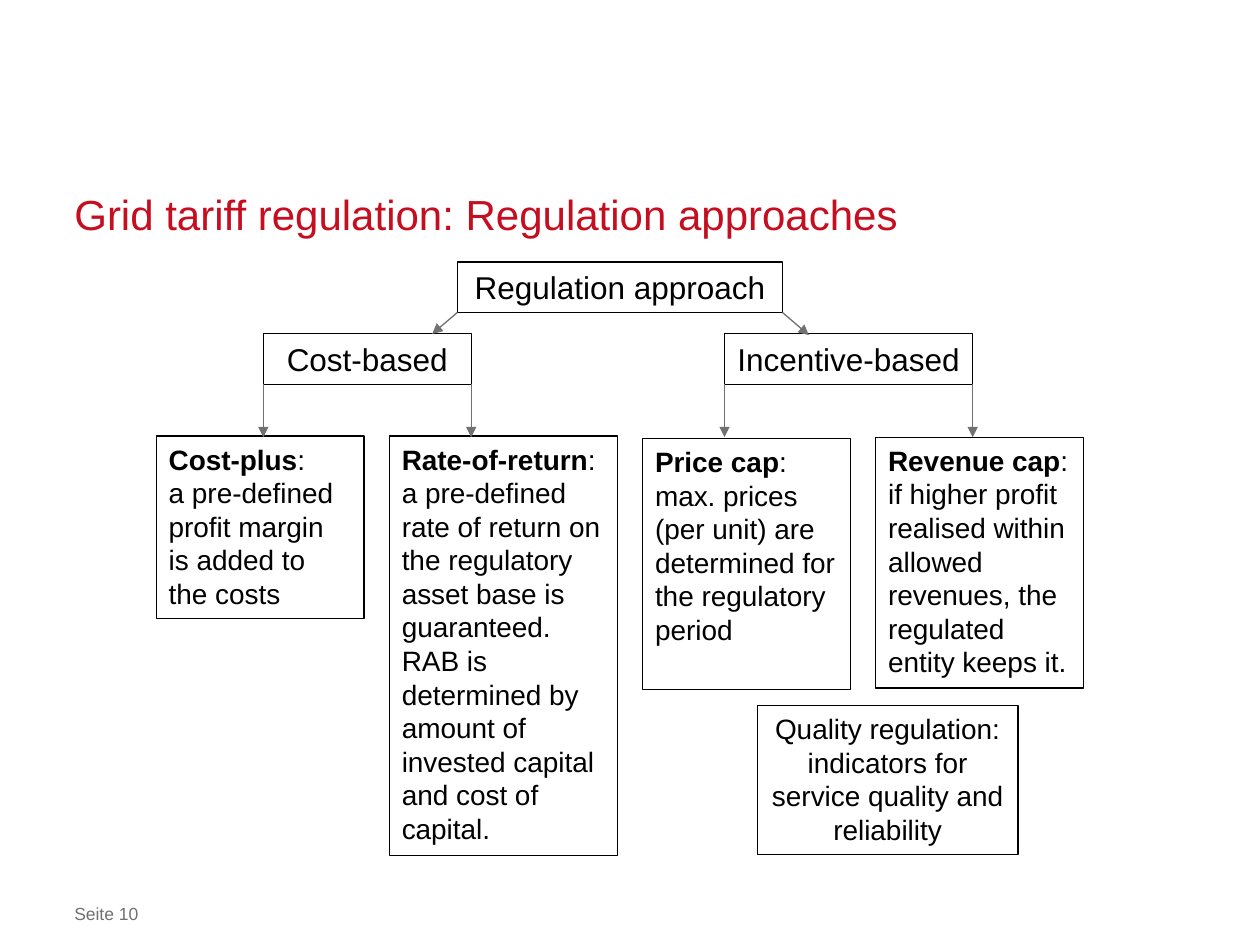
from pptx import Presentation
from pptx import util as u
from pptx.dml.color import RGBColor
from pptx.enum import shapes, text
from pptx.oxml.ns import qn
from lxml import etree

FONT = "Arial"
BLACK, RED, GREY = "000000", "C50E1F", "717171"
LEFT, CENTER = text.PP_ALIGN.LEFT, text.PP_ALIGN.CENTER

# Tree nodes: label, left, top, width, height
ROOT = ("Regulation approach", 3.63, 2.08, 2.58, 0.4)
BRANCHES = [
    ("Cost-based", 2.09, 2.65, 1.65, 0.4),
    ("Incentive-based", 5.75, 2.65, 1.97, 0.4),
]
# Methods: name, explanations, left, top, width, height
METHODS = [
    ("Cost-plus", ["a pre-defined profit margin is added to the costs"],
     1.24, 3.46, 1.65, 1.45),
    ("Rate-of-return",
     ["a pre-defined rate of return on the regulatory asset base is guaranteed.",
      "RAB is determined by amount of invested capital and cost of capital."],
     3.09, 3.46, 1.81, 3.33),
    ("Price cap",
     ["max. prices (per unit) are determined for the regulatory period"],
     5.1, 3.48, 1.65, 1.99),
    ("Revenue cap",
     ["if higher profit realised within allowed revenues, "
      "the regulated entity keeps it."],
     6.95, 3.47, 1.65, 1.99),
]
QUALITY = ("Quality regulation: indicators for service quality and reliability",
           6.01, 5.6, 2.07, 1.18)
METHOD_TOP = 3.47


def rgb(hex_color):
    return RGBColor.from_string(hex_color)


def apply_format(target, values):
    for name, value in values.items():
        setattr(target, name, value)


def inches(*lengths):
    return [u.Inches(length) for length in lengths]


def add_run(paragraph, words, size, color, bold=False):
    run = paragraph.add_run()
    run.text = words
    apply_format(run.font, {"name": FONT, "size": u.Pt(size), "bold": bold})
    run.font.color.rgb = rgb(color)


def clear_margins(frame):
    apply_format(frame, dict.fromkeys(
        ("margin_left", "margin_top", "margin_right", "margin_bottom"), 0))


def add_title(slide, words):
    title = slide.shapes.title
    apply_format(title, dict(zip(("left", "top", "width", "height"),
                                 inches(0.59, 1.48, 8.82, 0.42))))
    frame = title.text_frame
    clear_margins(frame)
    apply_format(frame, {"vertical_anchor": text.MSO_ANCHOR.BOTTOM,
                         "word_wrap": True,
                         "auto_size": text.MSO_AUTO_SIZE.SHAPE_TO_FIT_TEXT})
    heading = frame.paragraphs[0]
    apply_format(heading, {"alignment": LEFT, "line_spacing": u.Pt(30),
                           "space_before": u.Pt(0)})
    add_run(heading, words, 24, RED)


def add_page_label(slide, words):
    label = slide.shapes.add_textbox(*inches(0.59, 7.17, 7.24, 0.17))
    clear_margins(label.text_frame)
    label.text_frame.word_wrap = True
    add_run(label.text_frame.paragraphs[0], words, 10, GREY)


def add_box(slide, paragraphs, place, size, alignment):
    """Outlined box; each paragraph is a list of (words, bold) pairs."""
    box = slide.shapes.add_shape(shapes.MSO_SHAPE.RECTANGLE, *inches(*place))
    box.shadow.inherit = False
    box.fill.background()
    box.line.color.rgb = rgb(BLACK)
    box.line.width = u.Pt(0.75)
    frame = box.text_frame
    apply_format(frame, {"word_wrap": True,
                         "vertical_anchor": text.MSO_ANCHOR.TOP,
                         "auto_size": text.MSO_AUTO_SIZE.SHAPE_TO_FIT_TEXT})
    for index, runs in enumerate(paragraphs):
        paragraph = frame.add_paragraph() if index else frame.paragraphs[0]
        paragraph.alignment = alignment
        for words, bold in runs:
            add_run(paragraph, words, size, BLACK, bold)


def add_label_box(slide, node, size):
    label, *place = node
    add_box(slide, [[(label, False)]], place, size, CENTER)


def add_method_box(slide, method):
    name, explanations, *place = method
    heading = [(name, True), (":", False)]
    add_box(slide, [heading] + [[(words, False)] for words in explanations],
            place, 16, LEFT)


def add_arrow(slide, start, end):
    arrow = slide.shapes.add_connector(shapes.MSO_CONNECTOR.STRAIGHT,
                                       *inches(*start, *end))
    arrow.line.color.rgb = rgb(GREY)
    arrow.line.width = u.Pt(0.75)
    etree.SubElement(arrow.line._get_or_add_ln(), qn("a:tailEnd"), type="triangle")
    etree.SubElement(arrow._element.spPr, qn("a:effectLst"))


def main():
    deck = Presentation()
    deck.slide_width, deck.slide_height = inches(10, 7.5)
    slide = deck.slides.add_slide(deck.slide_layouts[5])

    add_title(slide, "Grid tariff regulation: Regulation approaches")
    add_page_label(slide, "Seite 10")

    # Boxes of the tree
    for node in [ROOT, *BRANCHES]:
        add_label_box(slide, node, 18)
    for method in METHODS:
        add_method_box(slide, method)
    add_label_box(slide, QUALITY, 16)

    # Arrows from both lower corners of each branch to its methods
    for _, left, top, width, height in BRANCHES:
        for x in (left, left + width):
            add_arrow(slide, (x, top + height), (x, METHOD_TOP))

    # Arrows from the lower corners of the root to the branches
    _, left, top, width, height = ROOT
    add_arrow(slide, (left, top + height), (left - 0.2, 2.65))
    add_arrow(slide, (left + width, top + height), (left + width + 0.21, 2.66))

    deck.save("out.pptx")


if __name__ == "__main__":
    main()
